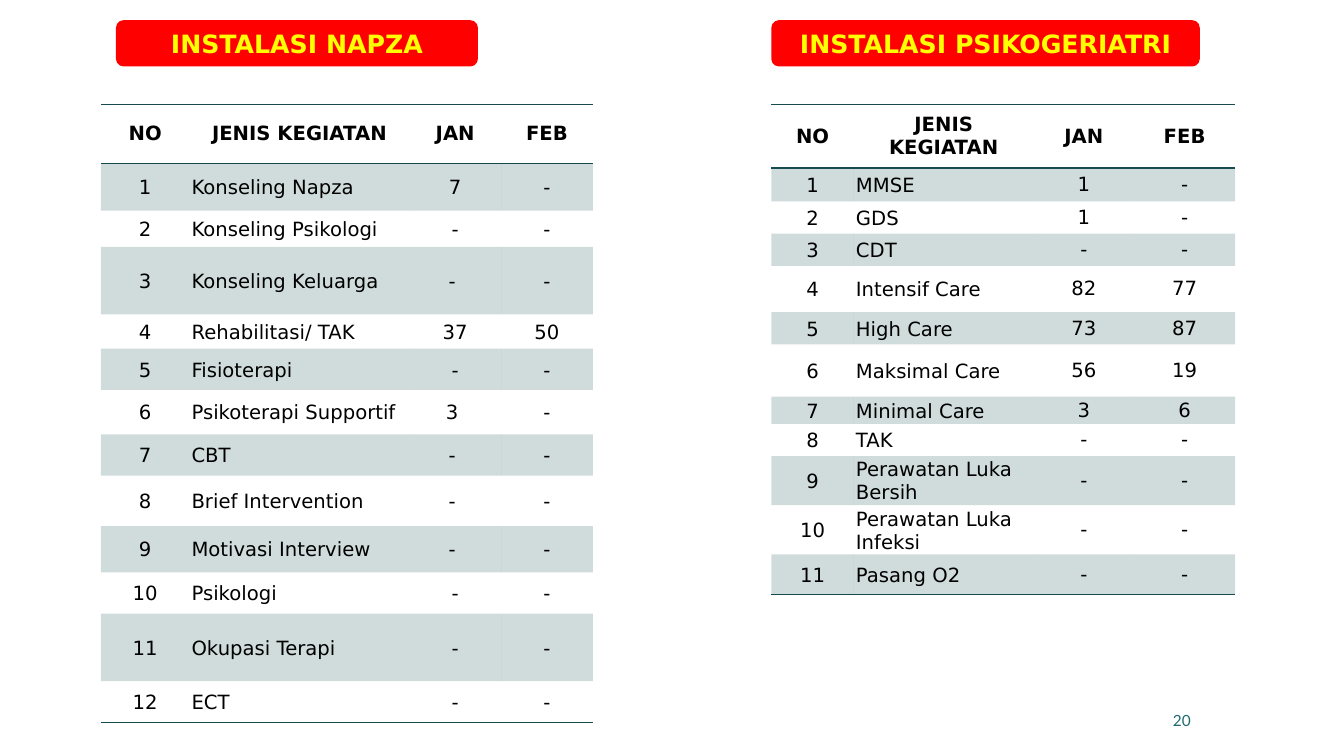
"""Build the slide with the activity tables of two hospital units."""
from lxml import etree
from pptx import Presentation
from pptx.dml.color import RGBColor
from pptx.enum.shapes import MSO_SHAPE
from pptx.enum.text import MSO_ANCHOR, PP_ALIGN
from pptx.oxml.ns import qn
from pptx.util import Inches, Pt

LEFT, CENTER, RIGHT = PP_ALIGN.LEFT, PP_ALIGN.CENTER, PP_ALIGN.RIGHT
MIDDLE = MSO_ANCHOR.MIDDLE
ROUNDED = MSO_SHAPE.ROUNDED_RECTANGLE
NO_GRID_STYLE = "{2D5ABB26-0587-4C30-8999-92F81FD0307C}"
TEAL = "164B4F"
SIDES = ("left", "top", "right", "bottom")
HEADINGS = ("NO", "JENIS KEGIATAN", "JAN", "FEB")

UNITS = [
    {
        "title": "INSTALASI NAPZA",
        "banner": (1.15, 3.59),
        "left": 1,
        "widths": (0.88, 2.18, 0.91, 0.91),
        "heading_height": 0.58,
        "heading_inset": 0.07,
        "value_insets": (0.02, 0.02, 0.02, 0),
        "activities": [
            (0.47, "Konseling Napza", "7", "-"),
            (0.36, "Konseling Psikologi", "-", "-"),
            (0.67, "Konseling Keluarga", "- ", "-"),
            (0.34, "Rehabilitasi/ TAK", "37", "50"),
            (0.41, "Fisioterapi", "-", "-"),
            (0.44, "Psikoterapi Supportif", "3 ", "-"),
            (0.41, "CBT", "- ", "-"),
            (0.5, "Brief Intervention", "- ", "-"),
            (0.46, "Motivasi Interview", "- ", "-"),
            (0.41, "Psikologi", "-", "-"),
            (0.67, "Okupasi Terapi", "-", "-"),
            (0.41, "ECT", "-", "-"),
        ],
    },
    {
        "title": "INSTALASI PSIKOGERIATRI",
        "banner": (7.65, 4.25),
        "left": 7.65,
        "widths": (0.82, 1.78, 1, 1),
        "heading_height": 0.61,
        "heading_inset": 0.08,
        "value_insets": (0, 0, 0, 0),
        "activities": [
            (0.33, "MMSE", "1", "-"),
            (0.32, "GDS", "1", "-"),
            (0.32, "CDT", "-", "-"),
            (0.46, "Intensif Care", "82", "77"),
            (0.32, "High Care", "73", "87"),
            (0.52, "Maksimal Care", "56", "19"),
            (0.27, "Minimal Care", "3", "6"),
            (0.32, "TAK", "-", "-"),
            (0.47, "Perawatan Luka Bersih", "-", "-"),
            (0.47, "Perawatan Luka Infeksi", "-", "-"),
            (0.4, "Pasang O2", "-", "-"),
        ],
    },
]


def color(value):
    return RGBColor.from_string(value)


def write(frame, text, align, ink, **font_format):
    para = frame.paragraphs[0]
    para.alignment = align
    span = para.add_run()
    span.text = text
    span.font.color.rgb = color(ink)
    for name, value in font_format.items():
        setattr(span.font, name, value)


deck = Presentation()
deck.slide_width, deck.slide_height = Inches(13.33), Inches(7.5)
page = deck.slides.add_slide(deck.slide_layouts[6])

number_box = page.shapes.add_textbox(Inches(8.8), Inches(6.95), Inches(3.11), Inches(0.4))
number_box.text_frame.word_wrap = True
number_box.text_frame.vertical_anchor = MIDDLE
write(number_box.text_frame, "20", RIGHT, "1F696F", name="Lato", size=Pt(11))

for unit in UNITS:
    left, width = unit["banner"]
    banner = page.shapes.add_shape(ROUNDED, Inches(left), Inches(0.2), Inches(width), Inches(0.46))
    banner.shadow.inherit = False
    banner.fill.solid()
    banner.fill.fore_color.rgb = color("FF0000")
    banner.line.fill.background()
    banner.text_frame.word_wrap = True
    banner.text_frame.vertical_anchor = MIDDLE
    write(banner.text_frame, unit["title"], CENTER, "FFFF00",
          name="DejaVu Sans", size=Pt(18), bold=True)

    activities = unit["activities"]
    rows = [HEADINGS] + [(str(number), *activity[1:])
                         for number, activity in enumerate(activities, 1)]
    heights = [unit["heading_height"]] + [activity[0] for activity in activities]
    table = page.shapes.add_table(
        len(rows), len(HEADINGS), Inches(unit["left"]), Inches(1.04),
        Inches(sum(unit["widths"])), Inches(sum(heights))).table
    table.horz_banding = False
    table._tbl.tblPr.find(qn("a:tableStyleId")).text = NO_GRID_STYLE
    for column, width in zip(table.columns, unit["widths"]):
        column.width = Inches(width)

    for row_index, (texts, height) in enumerate(zip(rows, heights)):
        table.rows[row_index].height = Inches(height)
        heading = row_index == 0
        edges = ("lnT", "lnB") if heading else ("lnB",) if row_index == len(activities) else ()
        for column_index, text in enumerate(texts):
            cell = table.cell(row_index, column_index)
            cell.vertical_anchor = MIDDLE
            if heading:
                insets = (0.2, unit["heading_inset"]) * 2
            elif column_index < 2:
                insets = (0.02, 0.02, 0.02, 0)
            else:
                insets = unit["value_insets"]
            for side, inset in zip(SIDES, insets):
                setattr(cell, f"margin_{side}", Inches(inset))
            align = LEFT if column_index == 1 and not heading else CENTER
            write(cell.text_frame, text, align, "000000",
                  name="DejaVu Sans", size=Pt(14), bold=heading)

            properties = cell._tc.get_or_add_tcPr()
            if row_index % 2:
                cell.fill.solid()
                cell.fill.fore_color.rgb = color(TEAL)
                tint = properties.find(".//" + qn("a:srgbClr"))
                etree.SubElement(tint, qn("a:alpha"), val="20000")
            else:
                cell.fill.background()
            for position, edge in enumerate(edges):
                border = etree.Element(qn(f"a:{edge}"), w=str(Pt(1)))
                paint = etree.SubElement(border, qn("a:solidFill"))
                etree.SubElement(paint, qn("a:srgbClr"), val=TEAL)
                properties.insert(position, border)

deck.save("out.pptx")
